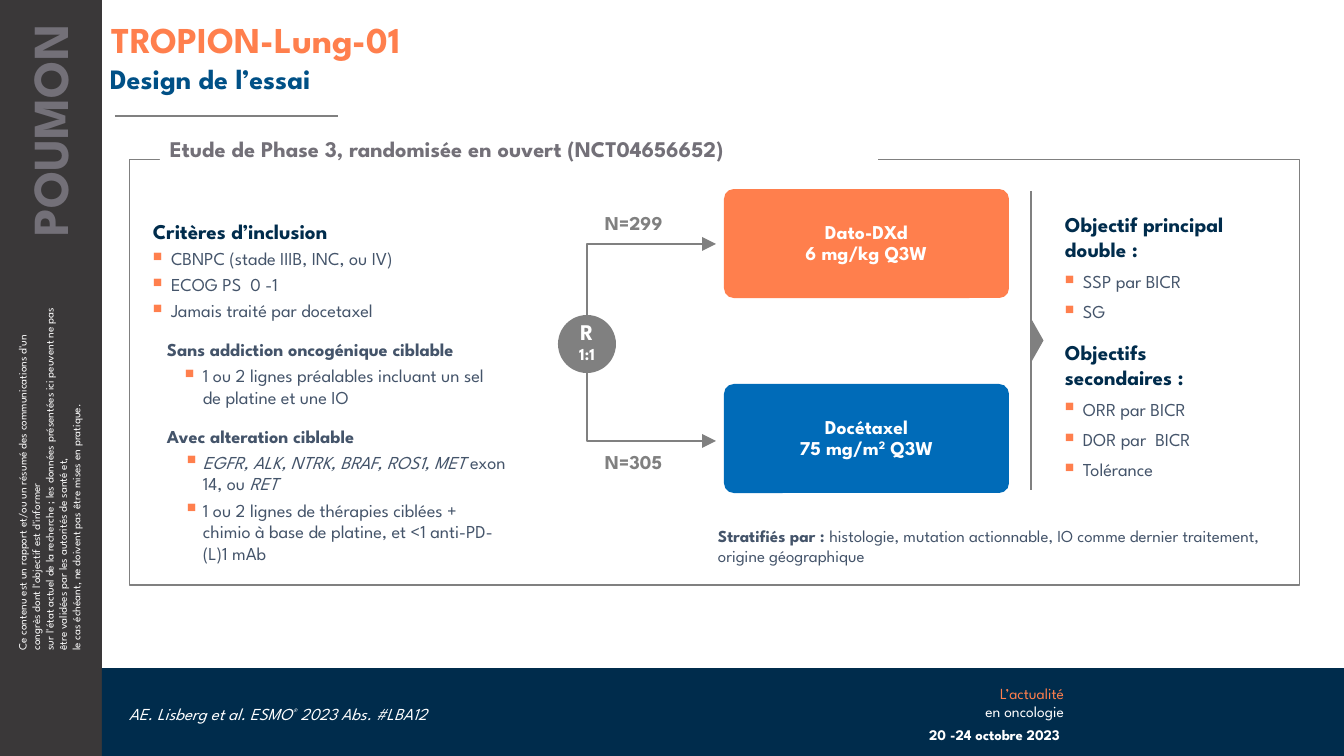
from dataclasses import dataclass

from lxml.etree import SubElement
from pptx import Presentation
from pptx.dml.color import RGBColor
from pptx.enum.shapes import MSO_CONNECTOR, MSO_SHAPE
from pptx.enum.text import MSO_ANCHOR, PP_ALIGN
from pptx.oxml.ns import qn
from pptx.util import Pt

PX = 12192000 / 1344
FONT = "League Spartan"
WHITE = RGBColor(0xFF, 0xFF, 0xFF)
CHARCOAL = RGBColor(0x3A, 0x38, 0x39)
HEADING_GREY = RGBColor(0x73, 0x70, 0x78)
LINE_GREY = RGBColor(0x80, 0x80, 0x80)
TEXT_GREY = RGBColor(0x44, 0x54, 0x6A)
NAVY = RGBColor(0x00, 0x2C, 0x4C)
TITLE_BLUE = RGBColor(0x00, 0x50, 0x86)
ARM_BLUE = RGBColor(0x00, 0x6B, 0xB8)
ORANGE = RGBColor(0xFF, 0x7F, 0x4D)


def px(length):
    return round(length * PX)


@dataclass
class Box:
    left: int
    top: int
    width: int
    height: int

    def inner(self, left, top, width, height):
        return Box(self.left + left, self.top + top, width, height)

    def emu(self):
        return [px(side) for side in (self.left, self.top, self.width, self.height)]


@dataclass
class Span:
    text: str
    size: float
    color: RGBColor
    bold: bool = False
    italic: bool = False
    raised: bool = False


@dataclass
class Para:
    spans: list
    before: int = 0
    margin: int = 0
    hang: int = 0
    spacing: object = None
    align: object = PP_ALIGN.LEFT


def add_span(para, span):
    for index, line in enumerate(span.text.split("\n")):
        if index:
            para.add_line_break()
        if not line:
            continue
        run = para.add_run()
        run.text = line
        run.font.name = FONT
        run.font.size = Pt(span.size)
        run.font.color.rgb = span.color
        run.font.bold = span.bold
        run.font.italic = span.italic
        if span.raised:
            run.font._element.set("baseline", "30000")


def add_bullet(properties):
    color = SubElement(properties, qn("a:buClr"))
    SubElement(color, qn("a:srgbClr")).set("val", str(ORANGE))
    SubElement(properties, qn("a:buSzPct")).set("val", "70000")
    SubElement(properties, qn("a:buChar")).set("char", "■")


def write(shape, paras, insets=(10, 5, 10, 5), anchor=MSO_ANCHOR.TOP, wrap=True):
    frame = shape.text_frame
    frame.word_wrap = wrap
    frame.vertical_anchor = anchor
    frame.margin_left, frame.margin_top, frame.margin_right, frame.margin_bottom = map(px, insets)
    for index, item in enumerate(paras):
        para = frame.add_paragraph() if index else frame.paragraphs[0]
        properties = para._p.get_or_add_pPr()
        properties.set("marL", str(px(item.margin)))
        properties.set("indent", str(px(-item.hang)))
        if item.hang:
            add_bullet(properties)
        para.alignment = item.align
        para.space_before = Pt(item.before if index else 0)
        if item.spacing:
            para.line_spacing = item.spacing
        for span in item.spans:
            add_span(para, span)


def add_text(page, box, paras, rotation=0, **options):
    shape = page.shapes.add_textbox(*box.emu())
    shape.rotation = rotation
    write(shape, paras, **options)


def add_block(page, kind, box, fill=None, line=None, width=0.75):
    shape = page.shapes.add_shape(kind, *box.emu())
    shape.shadow.inherit = False
    if fill is None:
        shape.fill.background()
    else:
        shape.fill.solid()
        shape.fill.fore_color.rgb = fill
    if line is None:
        shape.line.fill.background()
    else:
        shape.line.color.rgb = line
        shape.line.width = Pt(width)
    return shape


def add_rule(page, left, top, right, bottom, width):
    rule = page.shapes.add_connector(MSO_CONNECTOR.STRAIGHT, *map(px, (left, top, right, bottom)))
    rule.line.color.rgb = LINE_GREY
    rule.line.width = Pt(width)
    SubElement(rule._element.spPr, qn("a:effectLst"))


def bullet(text, before, margin=18, hang=18):
    spans = text if isinstance(text, list) else [Span(text, 13, TEXT_GREY)]
    return Para(spans, before, margin, hang)


def sidebar(page, box):
    add_block(page, MSO_SHAPE.RECTANGLE, box, CHARCOAL)
    notice = ("Ce contenu est un rapport et/ou un résumé des communications d'un congrès dont l'objectif est d'informer\n"
              "sur l'état actuel de la recherche ; les données présentées ici peuvent ne pas être validées "
              "par les autorités de santé et,\n"
              "le cas échéant, ne doivent pas être mises en pratique.")
    add_text(page, box.inner(-132, 440, 363, 78), [Para([Span(notice, 8, WHITE)])], 270)
    add_text(page, box.inner(-105, 119, 309, 72),
             [Para([Span("POUMON", 36, HEADING_GREY, True)], align=PP_ALIGN.RIGHT)],
             270, insets=(10, 5, 24, 5))


def footer(page, box):
    add_block(page, MSO_SHAPE.RECTANGLE, box, NAVY)
    add_text(page, box.inner(17, 3, 758, 85), [Para([
        Span("AE. Lisberg et al. ESMO", 12, WHITE, italic=True),
        Span("®", 12, WHITE, italic=True, raised=True),
        Span(" 2023 Abs. #LBA12", 12, WHITE, italic=True)])], anchor=MSO_ANCHOR.MIDDLE)
    add_text(page, box.inner(806, 11, 166, 47), [Para(
        [Span("L’actualité\n", 11, ORANGE), Span("en oncologie", 11, WHITE)], align=PP_ALIGN.RIGHT)])
    add_text(page, box.inner(806, 55, 156, 27), [Para(
        [Span("20 -24 octobre 2023", 10.5, WHITE, True)], spacing=0.9, align=PP_ALIGN.RIGHT)],
        insets=(10, 5, 4, 5))


def header(page, box):
    add_text(page, box.inner(2, 0, 1227, 55),
             [Para([Span("TROPION-Lung-01", 26, ORANGE, True)], spacing=0.9)])
    add_text(page, box.inner(0, 40, 1227, 55), [Para([Span("Design de l’essai", 20, TITLE_BLUE, True)])])
    add_rule(page, box.left + 15, box.top + 99, box.left + 238, box.top + 99, 0.75)


def criteria(page, box):
    genes = [Span("EGFR, ALK, NTRK, BRAF, ROS1, MET ", 13, TEXT_GREY, italic=True),
             Span("exon 14, ou ", 13, TEXT_GREY), Span("RET", 13, TEXT_GREY, italic=True)]
    add_text(page, box, [
        Para([Span("Critères d’inclusion", 15, NAVY, True)]),
        bullet("CBNPC (stade IIIB, INC, ou IV)", 3),
        bullet("ECOG PS  0 -1", 3),
        bullet("Jamais traité par docetaxel", 3),
        Para([Span("Sans addiction oncogénique ciblable", 13, TEXT_GREY, True)], 12, 14),
        bullet("1 ou 2 lignes préalables incluant un sel de platine et une IO", 3, 50, 18),
        Para([Span("Avec alteration ciblable", 13, TEXT_GREY, True)], 12, 14),
        bullet(genes, 3, 50, 16),
        bullet("1 ou 2 lignes de thérapies ciblées + chimio à base de platine, et <1 anti-PD-(L)1 mAb", 3, 50, 16),
    ], insets=(8, 8, 8, 8))


def arm(page, box, fill, lines):
    block = add_block(page, MSO_SHAPE.ROUNDED_RECTANGLE, box, fill)
    block.adjustments[0] = 0.09
    write(block, [Para(spans, spacing=Pt(15), align=PP_ALIGN.CENTER) for spans in lines],
          insets=(8, 8, 8, 8), anchor=MSO_ANCHOR.MIDDLE)


def randomisation(page, box):
    bracket = add_block(page, MSO_SHAPE.LEFT_BRACKET, box.inner(29, 55, 129, 197), line=LINE_GREY, width=1)
    bracket.adjustments[0] = 0
    for end in ("a:headEnd", "a:tailEnd"):
        arrow = SubElement(bracket.line._get_or_add_ln(), qn(end))
        for name, value in (("type", "triangle"), ("w", "lg"), ("len", "lg")):
            arrow.set(name, value)
    circle = add_block(page, MSO_SHAPE.OVAL, box.inner(0, 126, 58, 58), LINE_GREY)
    write(circle, [Para([Span("R\n", 16, WHITE, True), Span("1:1", 12, WHITE, True)],
                        spacing=Pt(13), align=PP_ALIGN.CENTER)], insets=(1, 1, 1, 1), anchor=MSO_ANCHOR.BOTTOM)
    for top, count in ((22, "N=299"), (261, "N=305")):
        add_text(page, box.inner(47, top, 59, 29), [Para([Span(count, 14, LINE_GREY, True)])],
                 insets=(0, 0, 0, 5), wrap=False)
    arm(page, box.inner(166, 0, 285, 109), ORANGE,
        [[Span("Dato-DXd", 14, WHITE, True)], [Span("6 mg/kg Q3W", 14, WHITE, True)]])
    arm(page, box.inner(166, 195, 285, 109), ARM_BLUE,
        [[Span("Docétaxel", 14, WHITE, True)],
         [Span("75 mg/m", 14, WHITE, True), Span("2", 14, WHITE, True, raised=True),
          Span(" Q3W", 14, WHITE, True)]])


def objectives(page, box):
    add_rule(page, box.left, box.top, box.left, box.top + box.height, 1)
    pointer = add_block(page, MSO_SHAPE.ISOSCELES_TRIANGLE, box.inner(-17, 143, 46, 13), LINE_GREY)
    pointer.rotation = 90
    add_text(page, box.inner(26, 10, 195, 290), [
        Para([Span("Objectif principal double :", 15, NAVY, True)]),
        *[bullet(text, 6) for text in ("SSP par BICR", "SG")],
        Para([Span("Objectifs secondaires :", 15, NAVY, True)], 12),
        *[bullet(text, 6) for text in ("ORR par BICR", "DOR par  BICR", "Tolérance")],
    ], insets=(8, 8, 8, 8), anchor=MSO_ANCHOR.MIDDLE)


def study(page, box):
    add_block(page, MSO_SHAPE.RECTANGLE, box, line=LINE_GREY)
    heading = add_block(page, MSO_SHAPE.RECTANGLE, box.inner(30, -29, 718, 37), WHITE)
    write(heading, [Para([Span("Etude de Phase 3, randomisée en ouvert (NCT04656652)", 16, HEADING_GREY, True)])],
          anchor=MSO_ANCHOR.MIDDLE)
    criteria(page, box.inner(15, 51, 369, 361))
    randomisation(page, box.inner(428, 30, 451, 304))
    objectives(page, box.inner(901, 32, 221, 299))
    add_text(page, box.inner(578, 362, 584, 50), [Para([
        Span("Stratifiés par : ", 12, TEXT_GREY, True),
        Span("histologie, mutation actionnable, IO comme dernier traitement, origine géographique", 12, TEXT_GREY)])])


def main():
    deck = Presentation()
    deck.slide_width, deck.slide_height = px(1344), px(756)
    page = deck.slides.add_slide(deck.slide_layouts[6])
    sidebar(page, Box(0, 0, 102, 756))
    footer(page, Box(102, 668, 1242, 88))
    header(page, Box(100, 17, 1229, 100))
    study(page, Box(130, 159, 1170, 426))
    deck.save("out.pptx")


if __name__ == "__main__":
    main()
